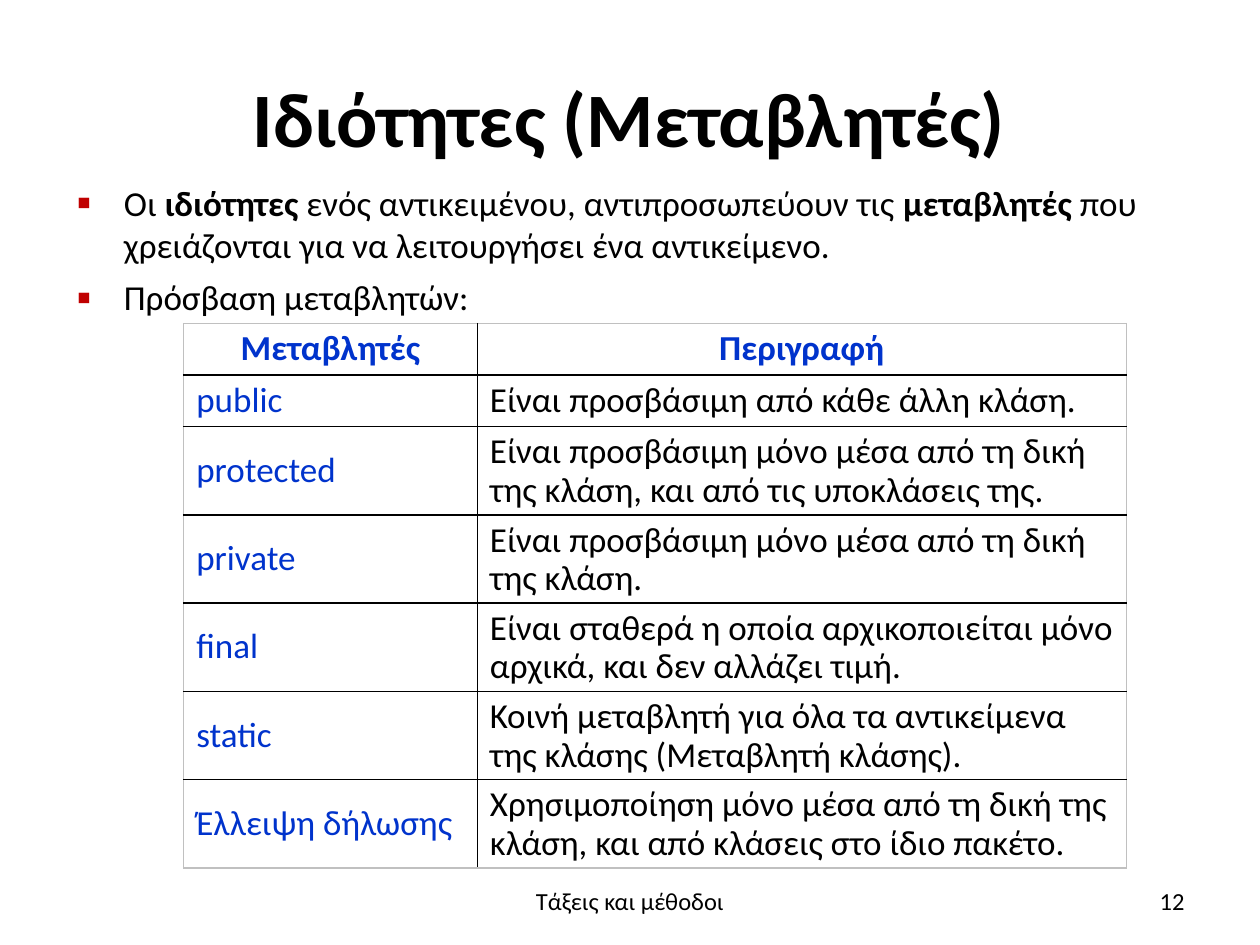
import pptx
import pptx.util
import pptx.dml.color
import pptx.enum.text
import pptx.oxml.ns
from lxml import etree

Pt = pptx.util.Pt
Align = pptx.enum.text.PP_ALIGN
Anchor = pptx.enum.text.MSO_ANCHOR
FONT, BLACK, BLUE, RED, GREY, WHITE = (
    "Calibri", "000000", "0033CC", "C00000", "C0C0C0", "FFFFFF")

# Content: body runs are (text, bold)
TITLE = "Ιδιότητες (Μεταβλητές)"
BODY = [
    [("Οι ", False), ("ιδιότητες", True),
     (" ενός αντικειμένου, αντιπροσωπεύουν τις ", False),
     ("μεταβλητές ", True),
     ("που χρειάζονται για να λειτουργήσει ένα αντικείμενο.", False)],
    [("Πρόσβαση μεταβλητών:", False)],
]
ROWS = [
    ("Μεταβλητές", "Περιγραφή"),
    ("public", "Είναι προσβάσιμη από κάθε άλλη κλάση."),
    ("protected", "Είναι προσβάσιμη µόνο μέσα από τη δική της κλάση, και από τις υποκλάσεις της."),
    ("private", "Είναι προσβάσιμη µόνο μέσα από τη δική της κλάση."),
    ("final", "Είναι σταθερά η οποία αρχικοποιείται µόνο αρχικά, και δεν αλλάζει τιμή."),
    ("static", "Κοινή μεταβλητή για όλα τα αντικείμενα της κλάσης (Μεταβλητή κλάσης)."),
    ("Έλλειψη δήλωσης", "Χρησιμοποίηση µόνο μέσα από τη δική της κλάση, και από κλάσεις στο ίδιο πακέτο."),
]
FOOTER = [  # text, left, width, alignment
    ("Τάξεις και μέθοδοι", 246, 228, Align.CENTER),
    ("12", 516, 168, Align.RIGHT),
]
COLS = (167.8, 370.8)
SHORT, TALL = 29.4, 50.16  # heights of one-line and two-line rows


def color(code):
    return pptx.dml.color.RGBColor.from_string(code)


def add_run(para, text, size, code=BLACK, bold=False):
    run = para.add_run()
    run.text = text
    run.font.name = FONT
    run.font.size = Pt(size)
    run.font.bold = bold
    run.font.color.rgb = color(code)


def add_node(parent, tag, **attrs):
    node = etree.SubElement(parent, pptx.oxml.ns.qn(tag))
    for key, val in attrs.items():
        node.set(key, val)
    return node


def add_box(left, top, width, height, anchor):
    box = slide.shapes.add_textbox(Pt(left), Pt(top), Pt(width), Pt(height))
    box.text_frame.word_wrap = True
    box.text_frame.vertical_anchor = anchor
    return box.text_frame


def add_bullet(para):
    props = para._p.get_or_add_pPr()
    props.set("marL", str(Pt(27)))
    props.set("indent", str(-Pt(27)))
    add_node(add_node(props, "a:buClr"), "a:srgbClr", val=RED)
    add_node(props, "a:buSzPct", val="120000")
    add_node(props, "a:buFont", typeface="Arial")
    add_node(props, "a:buChar", char="▪")


def add_edge(cell, side, code):
    line = add_node(cell._tc.get_or_add_tcPr(), "a:ln" + side, w=str(Pt(1)))
    add_node(add_node(line, "a:solidFill"), "a:srgbClr", val=code)


deck = pptx.Presentation()
deck.slide_width, deck.slide_height = Pt(720), Pt(540)
slide = deck.slides.add_slide(deck.slide_layouts[5])

# Title
title = slide.shapes.title
title.left, title.top, title.width, title.height = Pt(31), Pt(21.6), Pt(657.4), Pt(90)
frame = title.text_frame
frame.auto_size = pptx.enum.text.MSO_AUTO_SIZE.NONE
frame.vertical_anchor = Anchor.MIDDLE
frame.paragraphs[0].alignment = Align.CENTER
add_run(frame.paragraphs[0], TITLE, 44, bold=True)

# Bulleted text
frame = add_box(36.7, 100, 648, 79.2, Anchor.TOP)
for i, runs in enumerate(BODY):
    para = frame.add_paragraph() if i else frame.paragraphs[0]
    para.space_after = Pt(6)
    add_bullet(para)
    for text, bold in runs:
        add_run(para, text, 20, bold=bold)

# Table
heights = [SHORT] * 2 + [TALL] * (len(ROWS) - 2)
table = slide.shapes.add_table(
    len(ROWS), len(COLS), Pt(105), Pt(185), Pt(sum(COLS)), Pt(sum(heights))).table
for col, width in zip(table.columns, COLS):
    col.width = Pt(width)
for r, texts in enumerate(ROWS):
    table.rows[r].height = Pt(heights[r])
    for c, text in enumerate(texts):
        cell = table.cell(r, c)
        cell.vertical_anchor = Anchor.MIDDLE if r and (r, c) != (1, 1) else Anchor.TOP
        outer = {"L": c == 0, "R": c == len(COLS) - 1,
                 "T": r == 0, "B": r == len(ROWS) - 1}
        for side, edge in outer.items():
            add_edge(cell, side, GREY if edge else BLACK)
        cell.fill.solid()
        cell.fill.fore_color.rgb = color(WHITE)
        para = cell.text_frame.paragraphs[0]
        para.alignment = Align.LEFT if r else Align.CENTER
        para.line_spacing = 0.9
        add_run(para, text, 20, BLACK if r and c else BLUE, bold=r == 0)

# Footer and page number
for text, left, width, align in FOOTER:
    para = add_box(left, 500.4, width, 28.8, Anchor.MIDDLE).paragraphs[0]
    para.alignment = align
    add_run(para, text, 14)

deck.save("out.pptx")
